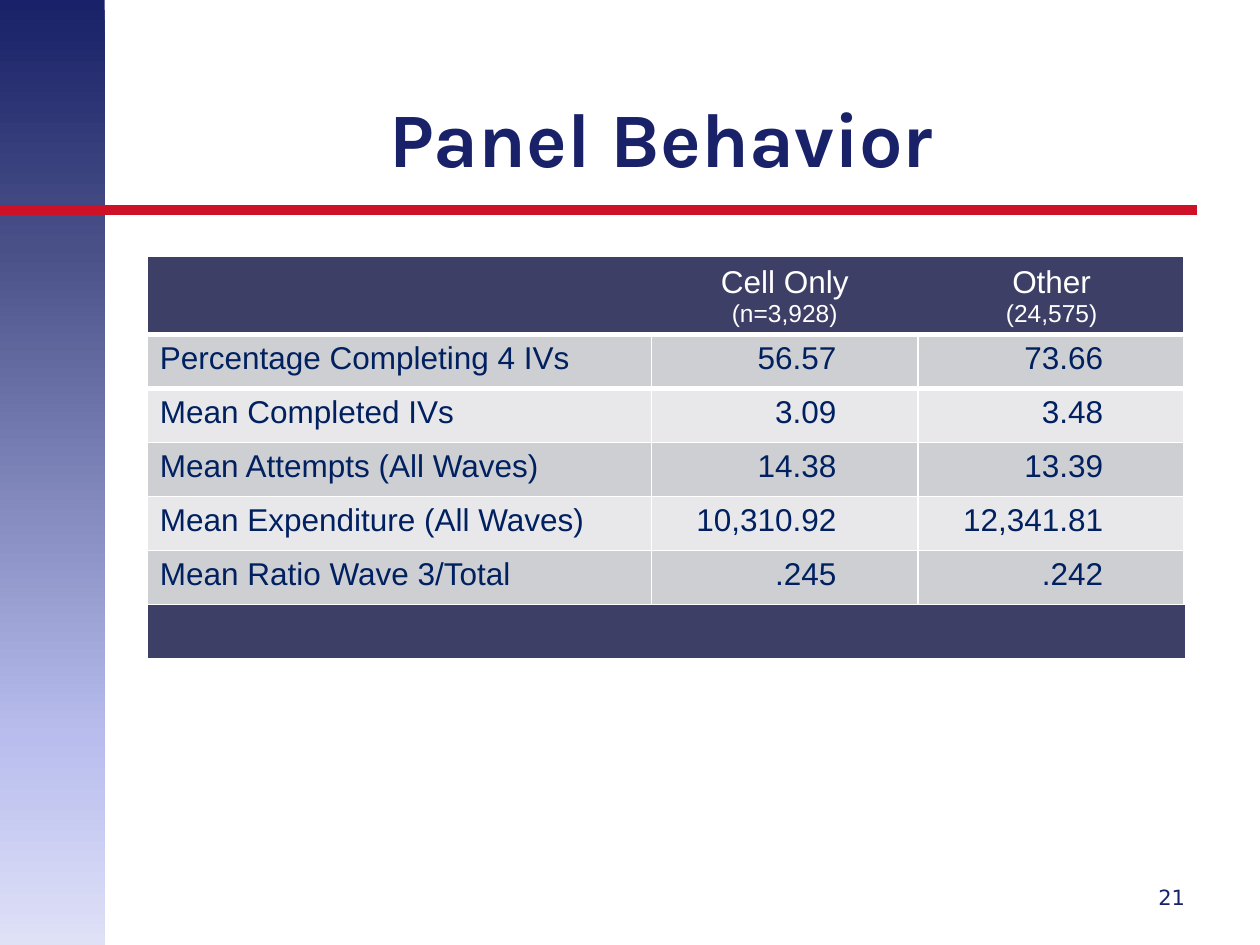
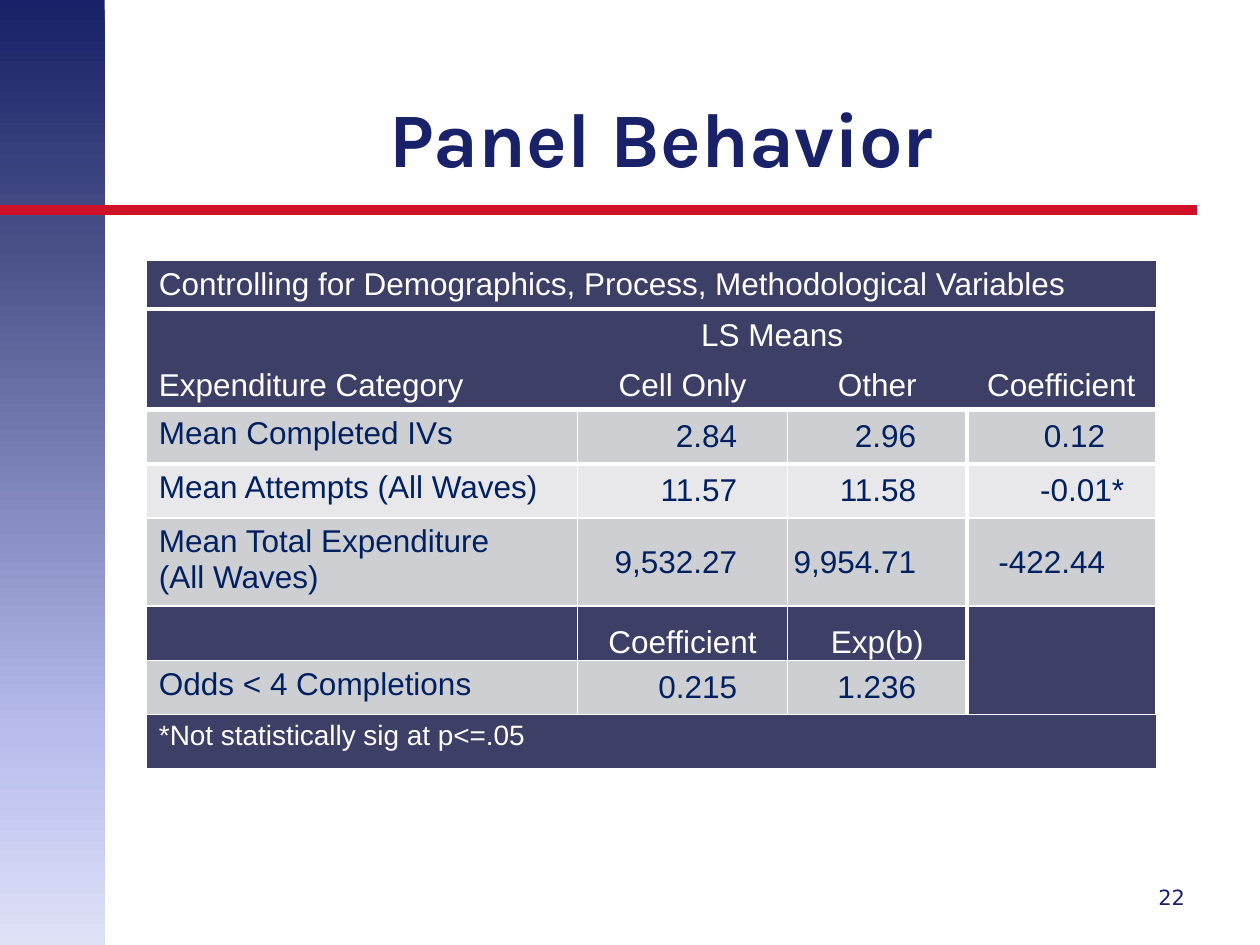
from collections import namedtuple
from copy import deepcopy

from lxml.etree import SubElement
from pptx import Presentation
from pptx.dml.color import RGBColor
from pptx.enum.shapes import MSO_CONNECTOR, MSO_SHAPE
from pptx.enum.text import MSO_ANCHOR as Anchor, MSO_AUTO_SIZE as AutoSize, PP_ALIGN as Align
from pptx.oxml.ns import qn
from pptx.util import Cm, Pt

NAVY = RGBColor(0x19, 0x21, 0x68)
RED = RGBColor(0xCE, 0x11, 0x26)
WHITE = RGBColor(0xFF, 0xFF, 0xFF)
INK = RGBColor(0x00, 0x20, 0x60)
SLATE = RGBColor(0x3E, 0x3F, 0x67)
SHADES = RGBColor(0xCE, 0xCF, 0xD3), RGBColor(0xE8, 0xE8, 0xEB)
BAND_STOPS = (
    (0, NAVY),
    (0.26, RGBColor(0x49, 0x50, 0x88)),
    (0.78, RGBColor(0xB8, 0xBD, 0xEE)),
    (1, RGBColor(0xDF, 0xE1, 0xF7)),
)

Box = namedtuple("Box", "left top width height")
Row = namedtuple("Row", "kind height line_below texts")
Grid = namedtuple("Grid", "rows columns column_lines merges bare number_inset number_anchor")

PAGE = Box(0, 0, Cm(25.4), Cm(19.05))
HEAD, BODY, SUBHEAD, FOOT = "head", "body", "subhead", "foot"

BEHAVIOR = Grid(
    rows=(
        Row(HEAD, 0.94, 3, ("", "Cell Only\n(n=3,928)", "Other\n(24,575)")),
        Row(BODY, 1.09, 3, ("Percentage Completing 4 IVs", "56.57", "73.66")),
        Row(BODY, 1.09, 1, ("Mean Completed IVs", "3.09", "3.48")),
        Row(BODY, 1.09, 1, ("Mean Attempts (All Waves)", "14.38", "13.39")),
        Row(BODY, 1.09, 1, ("Mean Expenditure (All Waves)", "10,310.92", "12,341.81")),
        Row(BODY, 1.09, 1, ("Mean Ratio Wave 3/Total", ".245", ".242")),
        Row(FOOT, 1.09, 1, ("", "", "")),
    ),
    columns=(10.16, 5.38, 5.38),
    column_lines=(1, 1, 1, 3),
    merges=((6, 0, 6, 2),),
    bare=(),
    number_inset=1.65,
    number_anchor=Anchor.TOP,
)

CONTROLLED = Grid(
    rows=(
        Row(HEAD, 0.94, 3, ("Controlling for Demographics, Process, Methodological Variables", "", "", "")),
        Row(HEAD, 0.94, 0, ("Expenditure Category", "LS Means", "", "Coefficient")),
        Row(HEAD, 0.94, 3, ("", "Cell Only", "Other", "")),
        Row(BODY, 1.09, 3, ("Mean Completed IVs", "2.84", "2.96", "0.12")),
        Row(BODY, 1.09, 1, ("Mean Attempts (All Waves)", "11.57", "11.58", "-0.01*")),
        Row(BODY, 1.09, 1, ("Mean Total Expenditure\n(All Waves)", "9,532.27", "9,954.71", "-422.44")),
        Row(SUBHEAD, 1.09, 1, ("", "Coefficient", "Exp(b)", "")),
        Row(BODY, 1.09, 1, ("Odds < 4 Completions", "0.215", "1.236", "")),
        Row(FOOT, 1.09, 1, ("*Not statistically sig at p<=.05", "", "", "")),
    ),
    columns=(8.69, 4.24, 3.61, 3.81),
    column_lines=(1, 1, 1, 3, 1),
    merges=((0, 0, 0, 3), (1, 0, 2, 0), (1, 1, 1, 2), (1, 3, 2, 3), (6, 3, 7, 3), (8, 0, 8, 3)),
    bare=((6, 3, "B"), (7, 3, "B"), (8, 3, "T")),
    number_inset=1.02,
    number_anchor=Anchor.MIDDLE,
)


def set_font(paragraph, name, size, color, bold=False):
    """Format a whole paragraph."""
    font = paragraph.font
    font.name, font.size, font.bold = name, Pt(size), bold
    font.color.rgb = color


def draw_band(slide, box):
    """Draw the fading band down the left side of the box."""
    band = slide.shapes.add_shape(MSO_SHAPE.RECTANGLE, box.left, box.top, Cm(2.11), box.height)
    band.shadow.inherit = False
    band.line.fill.background()
    band.fill.gradient()
    band.fill.gradient_angle = 270
    stops = band._element.spPr.find(qn("a:gradFill")).find(qn("a:gsLst"))
    for _ in range(len(BAND_STOPS) - len(stops)):
        stops.append(deepcopy(stops[0]))
    for stop, (position, color) in zip(band.fill.gradient_stops, BAND_STOPS):
        stop.position = position
        stop.color.rgb = color


def draw_rule(slide, box):
    """Draw the red rule under the title."""
    y = box.top + Cm(4.23)
    rule = slide.shapes.add_connector(MSO_CONNECTOR.STRAIGHT, box.left, y, box.left + Cm(24.13), y)
    rule.line.color.rgb = RED
    rule.line.width = Pt(6)
    SubElement(rule._element.spPr, qn("a:effectLst"))


def place_title(slide, box, wording):
    """Move the title placeholder into the box and format it."""
    title = slide.shapes.title
    title.left, title.top, title.width, title.height = box
    frame = title.text_frame
    frame.text = wording
    frame.auto_size = AutoSize.NONE
    frame.vertical_anchor = Anchor.BOTTOM
    heading = frame.paragraphs[0]
    heading.alignment = Align.CENTER
    set_font(heading, "Karla", 44, NAVY, bold=True)


def place_page_number(slide, box, number):
    """Write the page number at the right of the box."""
    frame = slide.shapes.add_textbox(*box).text_frame
    frame.word_wrap = True
    frame.vertical_anchor = Anchor.MIDDLE
    frame.text = str(number)
    frame.paragraphs[0].alignment = Align.RIGHT
    set_font(frame.paragraphs[0], "DejaVu Sans", 12, NAVY)


def set_borders(cell, widths):
    """Give each side of a cell a white line, or none where the width is zero."""
    properties = cell._tc.get_or_add_tcPr()
    for side, width in widths.items():
        line = SubElement(properties, qn(f"a:ln{side}"), w=str(Pt(width)))
        if width:
            fill = SubElement(line, qn("a:solidFill"))
            SubElement(fill, qn("a:srgbClr"), val=str(WHITE))
        else:
            SubElement(line, qn("a:noFill"))


def border_widths(grid, r, c):
    """Work out the line widths on the four sides of a cell."""
    lines = grid.column_lines
    ruled = grid.rows[r].kind in (BODY, SUBHEAD)
    widths = {
        "L": lines[c] if ruled or c == 0 else 0,
        "R": lines[c + 1] if ruled or c == len(grid.columns) - 1 else 0,
        "T": grid.rows[r - 1].line_below if r else 3,
        "B": grid.rows[r].line_below,
    }
    return {side: 0 if (r, c, side) in grid.bare else width for side, width in widths.items()}


def format_text(cell, grid, kind, c, wording):
    """Write a cell's wording in the manner of its row and column."""
    cell.text = wording
    alignment = Align.LEFT
    if kind == HEAD:
        cell.vertical_anchor = Anchor.BOTTOM
    if c and kind == BODY:
        alignment = Align.RIGHT
        cell.vertical_anchor = grid.number_anchor
        cell.margin_left = 0
        cell.margin_right = Cm(0.64 if wording.endswith("*") else grid.number_inset)
    elif c:
        alignment = Align.CENTER
    if c and kind == SUBHEAD:
        cell.vertical_anchor = Anchor.BOTTOM
        cell.margin_left = cell.margin_right = cell.margin_top = cell.margin_bottom = 0
    for index, paragraph in enumerate(cell.text_frame.paragraphs):
        paragraph.alignment = alignment
        size = 16 if kind == FOOT else 14 if kind == HEAD and index else 18
        set_font(paragraph, "Arial", size, INK if kind == BODY else WHITE)


def draw_table(slide, left, top, grid):
    """Build the table with its corner at the given point."""
    width, height = Cm(sum(grid.columns)), Cm(sum(row.height for row in grid.rows))
    table = slide.shapes.add_table(len(grid.rows), len(grid.columns), left, top, width, height).table
    table.first_row = table.horz_banding = False
    for column, size in zip(table.columns, grid.columns):
        column.width = Cm(size)
    heads = sum(row.kind == HEAD for row in grid.rows)
    for r, row in enumerate(grid.rows):
        table.rows[r].height = Cm(row.height)
        for c, wording in enumerate(row.texts):
            cell = table.cell(r, c)
            set_borders(cell, border_widths(grid, r, c))
            cell.fill.solid()
            cell.fill.fore_color.rgb = SHADES[(r - heads) % 2] if row.kind == BODY else SLATE
            format_text(cell, grid, row.kind, c, wording)
    for first_row, first_column, last_row, last_column in grid.merges:
        table.cell(first_row, first_column).merge(table.cell(last_row, last_column))


def add_table_slide(deck, box, number, left, top, grid):
    """Add a slide with the shared frame, a title and one table."""
    slide = deck.slides.add_slide(deck.slide_layouts[5])
    draw_band(slide, box)
    draw_rule(slide, box)
    place_title(slide, Box(box.left + Cm(2.54), box.top + Cm(0.76), Cm(21.59), Cm(3.05)), "Panel Behavior")
    place_page_number(slide, Box(box.left + Cm(22.23), box.top + Cm(17.58), Cm(1.91), Cm(1.02)), number)
    draw_table(slide, box.left + left, box.top + top, grid)


def main():
    """Build and save the deck."""
    deck = Presentation()
    deck.slide_width, deck.slide_height = PAGE.width, PAGE.height
    add_table_slide(deck, PAGE, 21, Cm(2.97), Cm(5.13), BEHAVIOR)
    add_table_slide(deck, PAGE, 22, Cm(2.95), Cm(5.21), CONTROLLED)
    deck.save("out.pptx")


if __name__ == "__main__":
    main()
